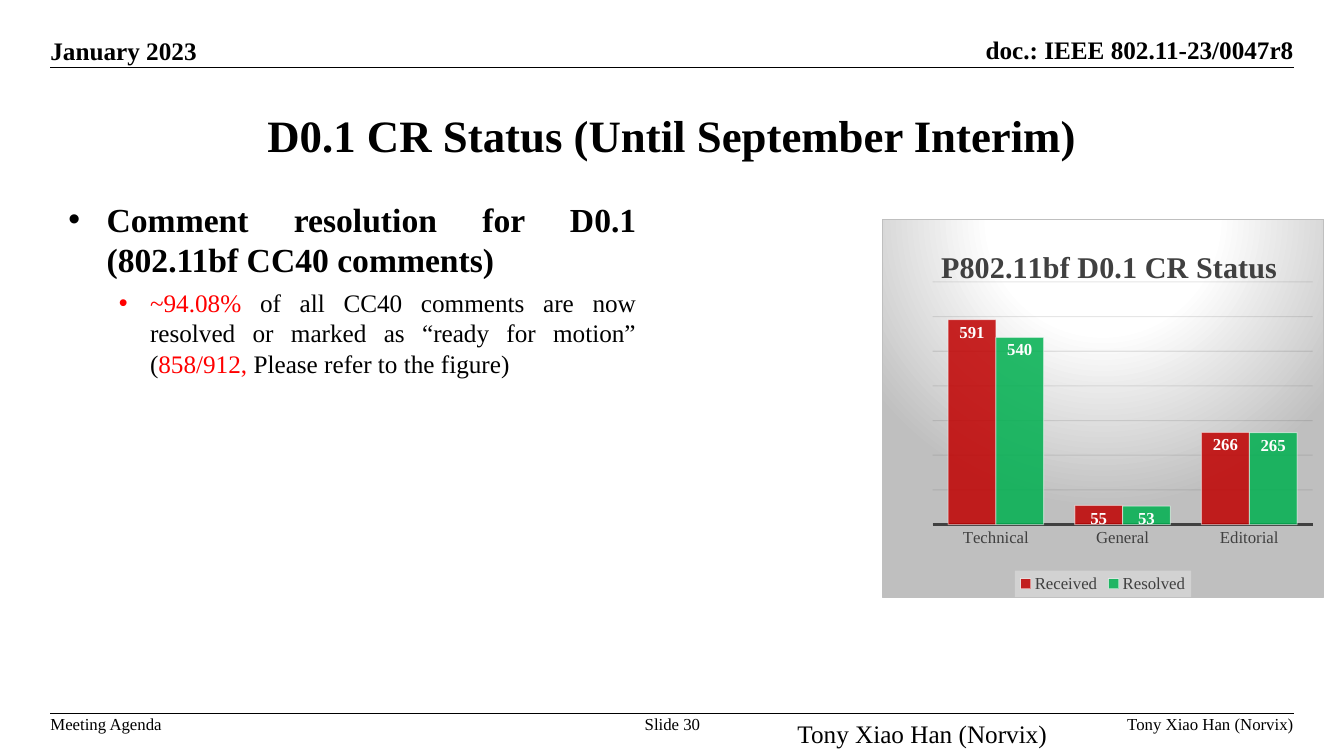
from dataclasses import dataclass

from lxml.etree import SubElement
from pptx import Presentation
from pptx.chart.data import CategoryChartData
from pptx.dml.color import RGBColor
from pptx.enum.chart import XL_CHART_TYPE, XL_LABEL_POSITION, XL_LEGEND_POSITION, XL_TICK_MARK
from pptx.enum.shapes import MSO_CONNECTOR
from pptx.enum.text import MSO_ANCHOR, PP_ALIGN
from pptx.oxml import parse_xml
from pptx.oxml.ns import nsdecls, qn
from pptx.util import Inches, Pt


@dataclass(frozen=True)
class Theme:
    font: str = "Times New Roman"
    black: str = "000000"
    white: str = "FFFFFF"
    red: str = "FF0000"
    gray: str = "404040"
    silver: str = "BFBFBF"
    pale: str = "F2F2F2"
    grid: str = "0D0D0D"
    received: str = "C00000"
    resolved: str = "00B050"
    title: float = 32
    heading: float = 24
    chart_title: float = 21.6
    text: float = 18
    small: float = 12


THEME = Theme()

# Content
TITLE = "D0.1 CR Status (Until September Interim)"
AUTHOR = "Tony Xiao Han (Norvix)"
LEFT, CENTER, RIGHT = PP_ALIGN.LEFT, PP_ALIGN.CENTER, PP_ALIGN.RIGHT
# text, (left, top, width, height), alignment, size, bold
PAGE_LABELS = [
    ("January 2023", (0.5, 0.35, 3.72, 0.3), LEFT, THEME.text, True),
    ("doc.: IEEE 802.11-23/0047r8", (9.11, 0.34, 3.72, 0.3), RIGHT, THEME.text, True),
    ("Meeting Agenda", (0.5, 7.08, 3, 0.2), LEFT, THEME.small, False),
    ("Slide 30", (5.67, 7.08, 2, 0.2), CENTER, THEME.small, False),
    (AUTHOR, (8.83, 7.08, 4, 0.2), RIGHT, THEME.small, False),
    (AUTHOR, (7.91, 7.13, 4.44, 0.3), LEFT, THEME.text, False),
]
RULE_TOPS = (0.67, 7.08)
# margin, hanging indent, size, bold, spans of (text, colour)
BULLETS = [
    (0.38, 0.38, THEME.heading, True,
     [("Comment resolution for D0.1 (802.11bf CC40 comments)", THEME.black)]),
    (0.81, 0.31, THEME.text, False,
     [("~94.08% ", THEME.red),
      ("of all CC40 comments are now resolved or marked as “ready for motion” (", THEME.black),
      ("858/912,", THEME.red),
      (" Please refer to the figure)", THEME.black)]),
]
CHART_TITLE = "P802.11bf D0.1 CR Status"
CATEGORIES = ["Technical", "General", "Editorial"]
SERIES = [
    ("Received", (591, 55, 266), THEME.received),
    ("Resolved", (540, 53, 265), THEME.resolved),
]


def rgb(color):
    return RGBColor.from_string(color)


def style(font, size, color, bold=False):
    font.name, font.size, font.bold = THEME.font, Pt(size), bold
    font.color.rgb = rgb(color)


def add_box(page, area, anchor=MSO_ANCHOR.TOP, insets=(0, 0)):
    frame = page.shapes.add_textbox(*map(Inches, area)).text_frame
    frame.word_wrap, frame.vertical_anchor = True, anchor
    frame.margin_left = frame.margin_right = Inches(insets[0])
    frame.margin_top = frame.margin_bottom = Inches(insets[1])
    return frame


def fade(element, *percents):
    """Set the opacity of the colours inside an element, in order."""
    for color, percent in zip(element.iter(qn("a:srgbClr")), percents):
        SubElement(color, qn("a:alpha")).set("val", str(percent * 1000))


def place(element, index, **values):
    """Give a chart part a manual layout, in fractions of the chart."""
    for old in element.findall(qn("c:layout")):
        element.remove(old)
    layout = parse_xml(f"<c:layout {nsdecls('c')}><c:manualLayout/></c:layout>")
    for name, value in values.items():
        SubElement(layout[0], qn(f"c:{name}")).set("val", str(value))
    element.insert(index, layout)


def add_page_frame(page):
    for text, area, align, size, bold in PAGE_LABELS:
        anchor = MSO_ANCHOR.BOTTOM if area[1] < 1 else MSO_ANCHOR.TOP
        frame = add_box(page, area, anchor)
        frame.text = text
        para = frame.paragraphs[0]
        para.alignment = align
        style(para.runs[0].font, size, THEME.black, bold)
    for top in RULE_TOPS:
        rule = page.shapes.add_connector(
            MSO_CONNECTOR.STRAIGHT, Inches(0.5), Inches(top), Inches(12.83), Inches(top))
        rule.line.color.rgb, rule.line.width = rgb(THEME.black), Pt(1)
        SubElement(rule._element.spPr, qn("a:effectLst"))


def add_title(page):
    title = page.shapes.title
    title.left, title.top, title.width, title.height = map(Inches, (1, 0.75, 11.33, 1.17))
    frame = title.text_frame
    frame.text, frame.vertical_anchor = TITLE, MSO_ANCHOR.MIDDLE
    frame.paragraphs[0].alignment = CENTER
    style(frame.paragraphs[0].runs[0].font, THEME.title, THEME.black, True)


def add_bullets(page):
    frame = add_box(page, (0.58, 1.92, 5.83, 4.83), insets=(0.1, 0.05))
    for number, (margin, hanging, size, bold, spans) in enumerate(BULLETS):
        para = frame.add_paragraph() if number else frame.paragraphs[0]
        para.alignment, para.space_after = PP_ALIGN.JUSTIFY, Pt(6)
        properties = para._p.get_or_add_pPr()
        properties.set("marL", str(Inches(margin)))
        properties.set("indent", str(-Inches(hanging)))
        SubElement(properties, qn("a:buFont")).set("typeface", "Arial")
        SubElement(properties, qn("a:buChar")).set("char", "•")
        for text, color in spans:
            span = para.add_run()
            span.text = text
            style(span.font, size, color, bold)


def add_status_chart(page):
    data = CategoryChartData()
    data.categories = CATEGORIES
    for name, values, color in SERIES:
        data.add_series(name, values)
    chart = page.shapes.add_chart(
        XL_CHART_TYPE.COLUMN_CLUSTERED, *map(Inches, (8.75, 2.17, 4.38, 3.76)), data).chart
    style(chart.font, 10, THEME.black)

    # Background
    background = parse_xml(
        f'<c:spPr {nsdecls("c", "a")}><a:gradFill><a:gsLst>'
        f'<a:gs pos="0"><a:srgbClr val="{THEME.white}"/></a:gs>'
        f'<a:gs pos="39000"><a:srgbClr val="{THEME.white}"/></a:gs>'
        f'<a:gs pos="100000"><a:srgbClr val="{THEME.silver}"/></a:gs></a:gsLst>'
        '<a:path path="circle"><a:fillToRect l="50000" t="-80000" r="50000" b="180000"/>'
        '</a:path></a:gradFill><a:ln w="9525"><a:solidFill>'
        f'<a:srgbClr val="{THEME.silver}"/></a:solidFill></a:ln></c:spPr>')
    chart_part = chart._chartSpace.find(qn("c:chart"))
    chart_part.addnext(background)

    # Title and plot area
    chart.has_title = True
    chart.chart_title.text_frame.text = CHART_TITLE
    style(chart.chart_title.text_frame.paragraphs[0].runs[0].font,
          THEME.chart_title, THEME.gray, True)
    place(chart.chart_title._element, 1, xMode="edge", yMode="edge", x=0.12, y=0.06)
    place(chart_part.find(qn("c:plotArea")), 0, layoutTarget="inner",
          xMode="edge", yMode="edge", x=0.113, y=0.166, w=0.863, h=0.642)

    # Columns and their labels
    plot = chart.plots[0]
    plot.gap_width, plot.overlap, plot.vary_by_categories = 65, 0, False
    for series, (name, values, color) in zip(plot.series, SERIES):
        series.format.fill.solid()
        series.format.fill.fore_color.rgb = rgb(color)
        series.format.line.color.rgb = rgb(THEME.white)
        series.format.line.width = Pt(0.75)
        fade(series._element.find(qn("c:spPr")), 85, 50)
        labels = series.data_labels
        labels.show_value, labels.position = True, XL_LABEL_POSITION.INSIDE_END
        style(labels.font, THEME.small, THEME.white, True)

    # Axes
    names, counts = chart.category_axis, chart.value_axis
    names.major_tick_mark = names.minor_tick_mark = XL_TICK_MARK.NONE
    names.format.line.color.rgb, names.format.line.width = rgb(THEME.gray), Pt(1.5)
    style(names.tick_labels.font, THEME.small, THEME.gray)
    counts.minimum_scale, counts.maximum_scale, counts.major_unit = 0, 700, 100
    counts.visible, counts.has_major_gridlines = False, True
    grid = counts.major_gridlines.format.line
    grid.color.rgb, grid.width = rgb(THEME.grid), Pt(0.75)
    fade(counts._element.find(qn("c:majorGridlines")), 10)

    # Legend
    chart.has_legend = True
    legend = chart.legend
    legend.position, legend.include_in_layout = XL_LEGEND_POSITION.BOTTOM, False
    style(legend.font, THEME.small, THEME.gray)
    place(legend._element, 1, xMode="edge", yMode="edge", x=0.3, y=0.93, w=0.4, h=0.07)
    panel = parse_xml(f'<c:spPr {nsdecls("c", "a")}><a:solidFill>'
                      f'<a:srgbClr val="{THEME.pale}"/></a:solidFill></c:spPr>')
    fade(panel, 39)
    legend._element.find(qn("c:txPr")).addprevious(panel)


def main():
    deck = Presentation()
    deck.slide_width, deck.slide_height = Inches(13.33), Inches(7.5)
    page = deck.slides.add_slide(deck.slide_layouts[5])
    add_page_frame(page)
    add_title(page)
    add_bullets(page)
    add_status_chart(page)
    deck.save("out.pptx")


if __name__ == "__main__":
    main()
